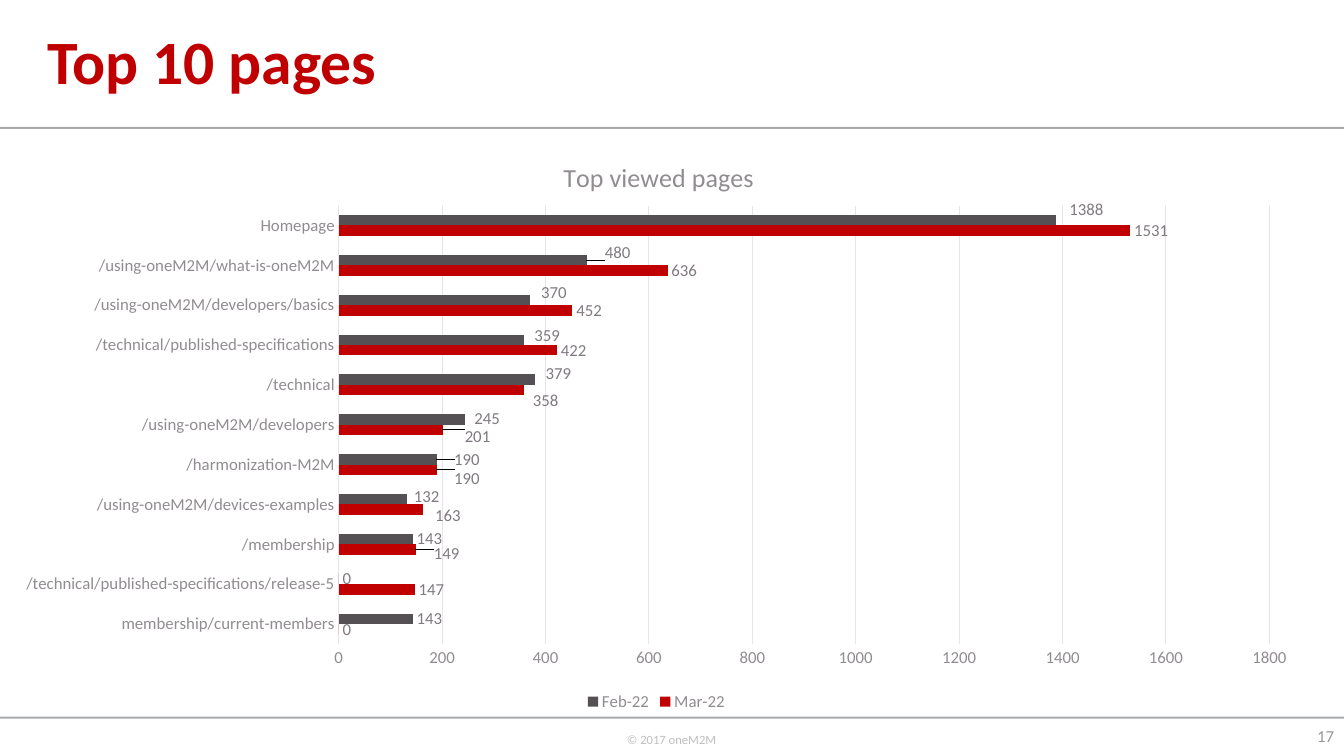
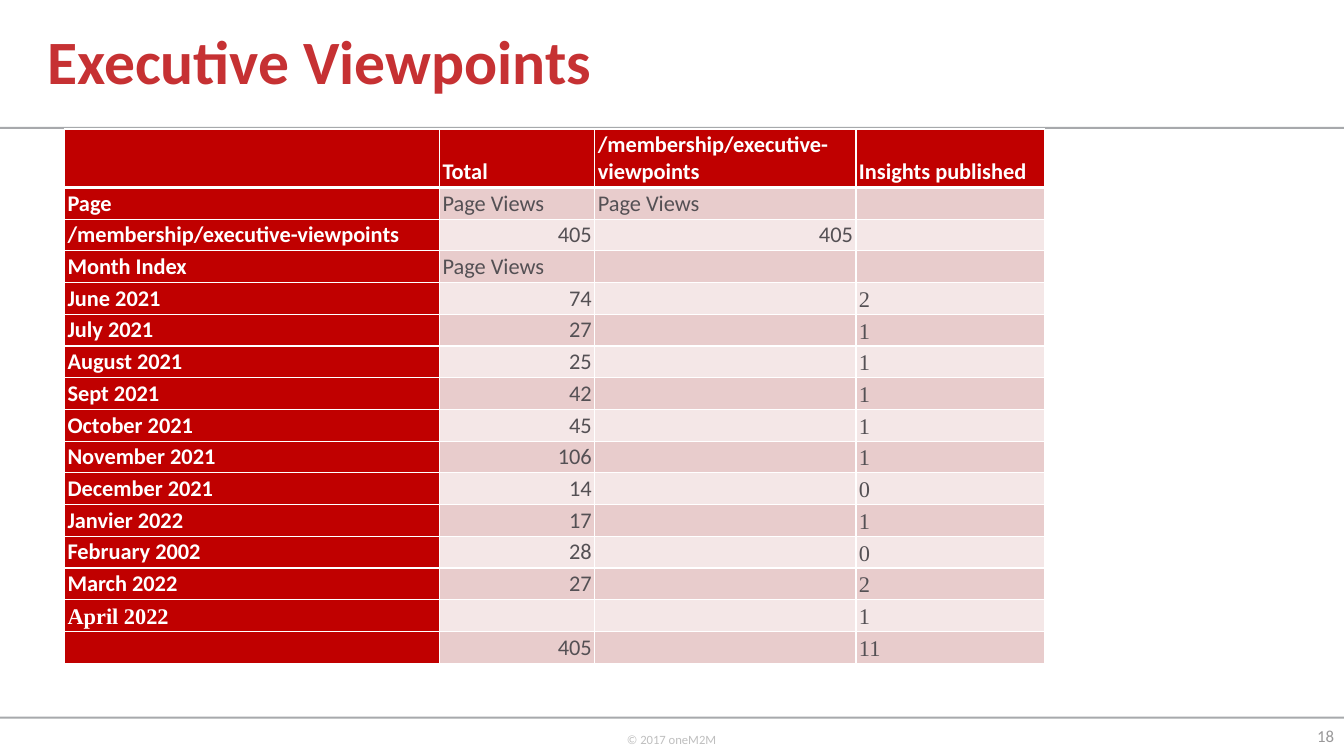
from collections import namedtuple
from dataclasses import dataclass

from lxml.etree import SubElement
from pptx import Presentation
from pptx.chart.data import CategoryChartData
from pptx.dml.color import RGBColor
from pptx.enum.chart import XL_CHART_TYPE, XL_LABEL_POSITION, XL_LEGEND_POSITION, XL_TICK_MARK
from pptx.enum.shapes import MSO_SHAPE
from pptx.enum.text import MSO_ANCHOR, PP_ALIGN
from pptx.oxml import parse_xml
from pptx.oxml.ns import nsdecls, qn
from pptx.util import Inches, Pt

Box = namedtuple("Box", "left top width height")


@dataclass(frozen=True)
class Theme:
    font: str = "Calibri"
    serif: str = "Times New Roman"
    red: str = "C00000"
    title_red: str = "C63133"
    white: str = "FFFFFF"
    dark: str = "545054"
    rule: str = "A7A9AC"
    copyright: str = "BFBFBF"
    page: str = "999899"
    axis: str = "918C91"
    grid: str = "E6E4E6"
    label: str = "807A80"
    bands: tuple = ("E8CCCC", "F4E7E7")
    title_size: float = 44
    chart_title_size: float = 18.6
    table_size: float = 16
    small_size: float = 12
    copyright_size: float = 9


THEME = Theme()
SLIDE = Box(0, 0, 13.33, 7.5)

PAGES = [
    # page, Mar-22, Feb-22
    ("membership/current-members", 0, 143),
    ("/technical/published-specifications/release-5", 147, 0),
    ("/membership", 149, 143),
    ("/using-oneM2M/devices-examples", 163, 132),
    ("/harmonization-M2M", 190, 190),
    ("/using-oneM2M/developers", 201, 245),
    ("/technical", 358, 379),
    ("/technical/published-specifications", 422, 359),
    ("/using-oneM2M/developers/basics", 452, 370),
    ("/using-oneM2M/what-is-oneM2M", 636, 480),
    ("Homepage", 1531, 1388),
]
# Label shifts in inches, by row of PAGES
MAR_SHIFTS = {2: (0.14, 0.04), 3: (0.08, 0.06), 4: (0.13, 0.09),
              5: (0.18, 0.07), 6: (0.05, 0.1)}
FEB_SHIFTS = {3: (0.03, -0.03), 4: (0.13, 0), 5: (0.05, -0.01), 6: (0.07, -0.06),
              7: (0.06, -0.04), 8: (0.07, -0.07), 9: (0.14, -0.07), 10: (0.09, -0.1)}

VIEWPOINTS = [
    ("", "Total", "/membership/executive-viewpoints", "Insights published"),
    ("Page", "Page Views", "Page Views", ""),
    ("/membership/executive-viewpoints", "405", "405", ""),
    ("Month Index", "Page Views", "", ""),
    ("June 2021", "74", "", "2"),
    ("July 2021", "27", "", "1"),
    ("August 2021", "25", "", "1"),
    ("Sept 2021", "42", "", "1"),
    ("October 2021", "45", "", "1"),
    ("November 2021", "106", "", "1"),
    ("December 2021", "14", "", "0"),
    ("Janvier 2022", "17", "", "1"),
    ("February 2002", "28", "", "0"),
    ("March 2022", "27", "", "2"),
    ("April 2022", "", "", "1"),
    ("", "405", "", "11"),
]


def inches(box):
    return [Inches(length) for length in box]


def style_font(font, size, color, name=THEME.font, bold=False):
    font.size, font.name, font.bold = Pt(size), name, bold
    font.color.rgb = RGBColor.from_string(color)


def write(frame, text, align=PP_ALIGN.LEFT, spacing=None, **font_format):
    paragraph = frame.paragraphs[0]
    paragraph.alignment = align
    if spacing:
        paragraph.line_spacing = spacing
    run = paragraph.add_run()
    run.text = text
    style_font(run.font, **font_format)


def add_text(slide, box, text, anchor=MSO_ANCHOR.MIDDLE, wrap=True, **text_format):
    frame = slide.shapes.add_textbox(*inches(box)).text_frame
    frame.word_wrap, frame.vertical_anchor = wrap, anchor
    write(frame, text, **text_format)


def add_rule(slide, top):
    rule = slide.shapes.add_shape(MSO_SHAPE.RECTANGLE, *inches((0, top, SLIDE.width, 0.02)))
    rule.shadow.inherit = False
    rule.fill.solid()
    rule.fill.fore_color.rgb = RGBColor.from_string(THEME.rule)
    rule.line.fill.background()


def start_slide(deck, title, page, title_color):
    """Blank slide with title, both rules and footer."""
    slide = deck.slides.add_slide(deck.slide_layouts[6])
    for top in (1.26, 7.11):
        add_rule(slide, top)
    add_text(slide, Box(6.12, 7.21, 1.1, 0.4), "© 2017 oneM2M", anchor=MSO_ANCHOR.TOP,
             wrap=False, size=THEME.copyright_size, color=THEME.copyright)
    add_text(slide, Box(0.37, 0, 11.04, 1.28), title, spacing=0.9,
             size=THEME.title_size, color=title_color, bold=True)
    add_text(slide, Box(12.79, 7.1, 0.54, 0.4), str(page), align=PP_ALIGN.RIGHT,
             size=THEME.small_size, color=THEME.page)
    return slide


def manual_layout(box, **values):
    """Layout element whose lengths are fractions of the chart box."""
    layout = parse_xml(f'<c:layout {nsdecls("c")}><c:manualLayout/></c:layout>')
    for tag, value in values.items():
        if tag in ("x", "w"):
            value = value / box.width
        elif tag in ("y", "h"):
            value = value / box.height
        SubElement(layout[0], qn(f"c:{tag}"), val=str(value))
    return layout


def label_series(series, color, shifts, box):
    series.format.fill.solid()
    series.format.fill.fore_color.rgb = RGBColor.from_string(color)
    series.invert_if_negative = False
    labels = series.data_labels
    labels.show_value = True
    labels.position = XL_LABEL_POSITION.OUTSIDE_END
    style_font(labels.font, THEME.small_size, THEME.label)
    for row, (right, down) in shifts.items():
        label = series.points[row].data_label
        label.position = XL_LABEL_POSITION.OUTSIDE_END
        style_font(label.font, THEME.small_size, THEME.label)
        index = series._element.xpath(f'c:dLbls/c:dLbl/c:idx[@val="{row}"]')[0]
        index.addnext(manual_layout(box, x=right, y=down))


def style_axes(chart):
    for axis in (chart.category_axis, chart.value_axis):
        axis.major_tick_mark = axis.minor_tick_mark = XL_TICK_MARK.NONE
        style_font(axis.tick_labels.font, THEME.small_size, THEME.axis)
    pages, views = chart.category_axis, chart.value_axis
    views.minimum_scale, views.maximum_scale, views.major_unit = 0, 1800, 200
    views.has_major_gridlines = True
    views.format.line.fill.background()
    for line in (pages.format.line, views.major_gridlines.format.line):
        line.width = Pt(0.75)
        line.color.rgb = RGBColor.from_string(THEME.grid)


def add_page_chart(slide, box):
    names, march, february = zip(*PAGES)
    data = CategoryChartData(number_format="General")
    data.categories = names
    data.add_series("Mar-22", march)
    data.add_series("Feb-22", february)
    chart = slide.shapes.add_chart(XL_CHART_TYPE.BAR_CLUSTERED, *inches(box), data).chart
    style_font(chart.font, 10, THEME.dark)

    # Title and plot area
    chart.has_title = True
    heading = chart.chart_title
    write(heading.text_frame, "Top viewed pages", align=PP_ALIGN.CENTER,
          size=THEME.chart_title_size, color=THEME.axis)
    heading.include_in_layout = False
    for old in heading._element.findall(qn("c:layout")):
        heading._element.remove(old)
    heading._element.find(qn("c:tx")).addnext(
        manual_layout(box, xMode="edge", yMode="edge", x=5.54, y=0.25))
    plot_area = chart._chartSpace.chart.plotArea
    for old in plot_area.findall(qn("c:layout")):
        plot_area.remove(old)
    plot_area.insert(0, manual_layout(box, layoutTarget="inner", xMode="edge", yMode="edge",
                                      x=3.36, y=0.76, w=9.23, h=4.35))

    # Bars, axes and legend
    plot = chart.plots[0]
    plot.gap_width, plot.overlap, plot.vary_by_categories = 182, 0, False
    styles = ((THEME.red, MAR_SHIFTS), (THEME.dark, FEB_SHIFTS))
    for series, (color, shifts) in zip(plot.series, styles):
        label_series(series, color, shifts, box)
    style_axes(chart)
    chart.has_legend = True
    chart.legend.position = XL_LEGEND_POSITION.BOTTOM
    chart.legend.include_in_layout = False
    style_font(chart.legend.font, THEME.small_size, THEME.axis)


def fill_cell(cell, text, row, column):
    is_header = row == 0
    is_red = is_header or column == 0
    # Borders, with a heavy line under the header
    borders = {"lnL": 1, "lnR": 1, "lnT": 3 if row == 1 else 1, "lnB": 3 if is_header else 1}
    properties = cell._tc.get_or_add_tcPr()
    for side, width in borders.items():
        border = SubElement(properties, qn(f"a:{side}"), w=str(Pt(width)))
        SubElement(SubElement(border, qn("a:solidFill")), qn("a:srgbClr"), val=THEME.white)
    cell.fill.solid()
    cell.fill.fore_color.rgb = RGBColor.from_string(
        THEME.red if is_red else THEME.bands[(row - 1) % 2])
    # Text
    cell.margin_left = cell.margin_right = Inches(0.03)
    cell.margin_top = cell.margin_bottom = Inches(0.02)
    cell.vertical_anchor = MSO_ANCHOR.BOTTOM
    if not text:
        SubElement(cell.text_frame.paragraphs[0]._p, qn("a:endParaRPr"),
                   sz=str(THEME.table_size * 100))
        return
    is_serif = text == "April 2022" or (column == 3 and not is_header)
    is_count = text.isdigit() and column < 3
    write(cell.text_frame, text, align=PP_ALIGN.RIGHT if is_count else PP_ALIGN.LEFT,
          size=THEME.table_size, color=THEME.white if is_red else THEME.dark,
          name=THEME.serif if is_serif else THEME.font, bold=is_red)


def add_viewpoint_table(slide, box, header_height=0.58):
    widths = (3.72, 1.54, 2.59, 1.87)
    table = slide.shapes.add_table(len(VIEWPOINTS), len(widths), *inches(box)).table
    for column, width in zip(table.columns, widths):
        column.width = Inches(width)
    row_height = (box.height - header_height) / (len(VIEWPOINTS) - 1)
    for row, texts in enumerate(VIEWPOINTS):
        table.rows[row].height = Inches(row_height if row else header_height)
        for column, text in enumerate(texts):
            fill_cell(table.cell(row, column), text, row, column)


def main():
    deck = Presentation()
    deck.slide_width, deck.slide_height = Inches(SLIDE.width), Inches(SLIDE.height)
    pages = start_slide(deck, "Top 10 pages", 17, THEME.red)
    add_page_chart(pages, Box(0, 1.28, 13.02, 5.82))
    viewpoints = start_slide(deck, "Executive Viewpoints", 18, THEME.title_red)
    add_viewpoint_table(viewpoints, Box(0.64, 1.28, 9.72, 5.3))
    deck.save("out.pptx")


if __name__ == "__main__":
    main()
